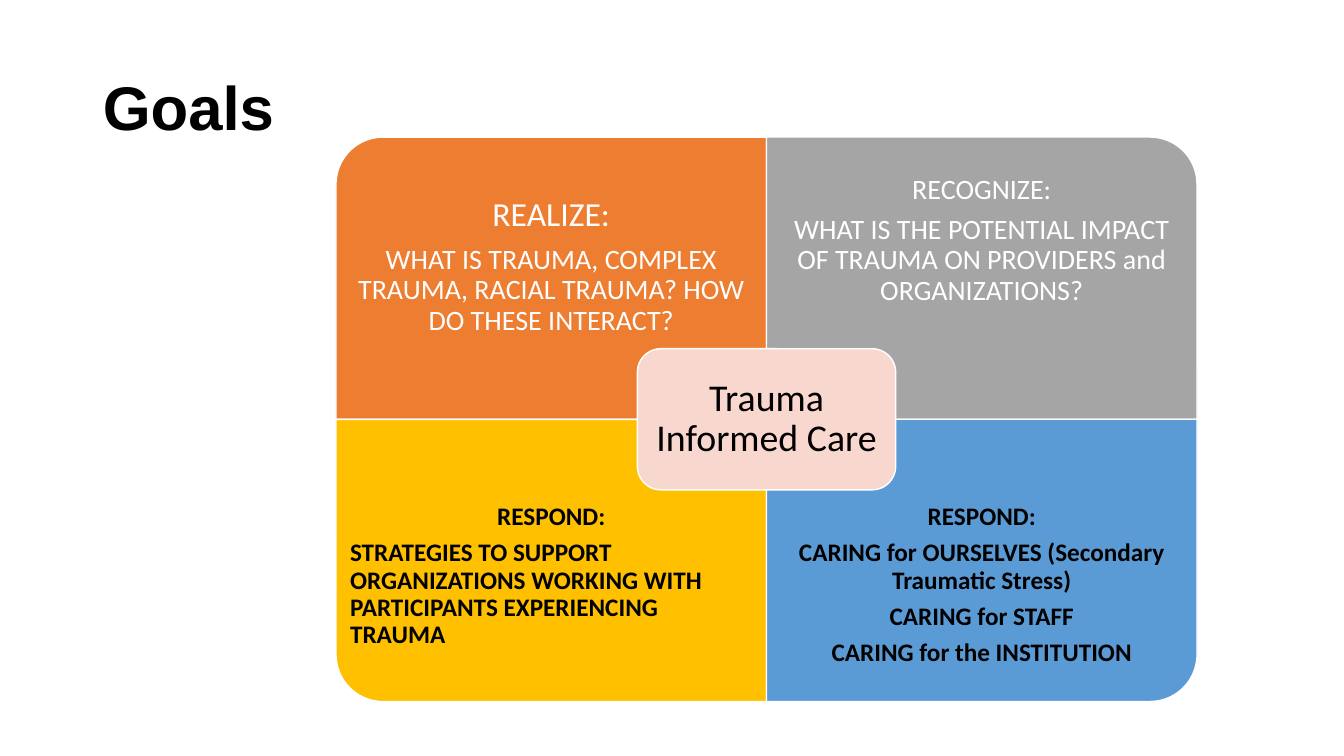
from pptx import Presentation
from pptx import util as u
from pptx.dml.color import RGBColor
from pptx.enum import shapes, text

WIDTH, HEIGHT = 13.33, 7.5
LEFT, CENTER = text.PP_ALIGN.LEFT, text.PP_ALIGN.CENTER

QUADRANTS = [
    dict(column=0, row=0, turn=270, fill="ED7D31", color="FFFFFF", bold=False, side=0.19, top=0.6,
         lines=[("REALIZE:", 24, CENTER),
                ("WHAT IS TRAUMA, COMPLEX TRAUMA, RACIAL TRAUMA? HOW DO THESE INTERACT?", 20, CENTER)]),
    dict(column=1, row=0, turn=0, fill="A5A5A5", color="FFFFFF", bold=False, side=0.12, top=0.38,
         lines=[("RECOGNIZE:", 20, CENTER),
                ("WHAT IS THE POTENTIAL IMPACT OF TRAUMA ON PROVIDERS and ORGANIZATIONS?", 20, CENTER)]),
    dict(column=0, row=1, turn=180, fill="FFC000", color="000000", bold=True, side=0.14, top=0.14,
         lines=[("RESPOND:", 18, CENTER),
                ("STRATEGIES TO SUPPORT ORGANIZATIONS WORKING WITH PARTICIPANTS EXPERIENCING TRAUMA", 18, LEFT)]),
    dict(column=1, row=1, turn=90, fill="5B9BD5", color="000000", bold=True, side=0.14, top=0.14,
         lines=[("RESPOND:", 18, CENTER),
                ("CARING for OURSELVES (Secondary Traumatic Stress)", 18, CENTER),
                ("CARING for STAFF", 18, CENTER),
                ("CARING for the INSTITUTION", 18, CENTER)]),
]


def rgb(value):
    return RGBColor.from_string(value)


def inches(*lengths):
    return [u.Inches(length) for length in lengths]


def write(frame, lines, color, bold, side, top, anchor, font="Calibri"):
    frame.word_wrap = True
    frame.auto_size = text.MSO_AUTO_SIZE.NONE
    frame.vertical_anchor = anchor
    frame.margin_left = frame.margin_right = frame.margin_bottom = u.Inches(side)
    frame.margin_top = u.Inches(top)
    for index, (words, size, align) in enumerate(lines):
        paragraph = frame.add_paragraph() if index else frame.paragraphs[0]
        paragraph.text = words
        paragraph.alignment = align
        paragraph.line_spacing = 0.9
        paragraph.space_before = u.Pt(0)
        paragraph.space_after = u.Pt(0.35 * size if index < len(lines) - 1 else 0)
        paragraph.font.name = font
        paragraph.font.size = u.Pt(size)
        paragraph.font.bold = bold
        paragraph.font.color.rgb = rgb(color)


def panel(slide, preset, box, fill):
    shape = slide.shapes.add_shape(preset, *inches(*box))
    shape.shadow.inherit = False
    shape.fill.solid()
    shape.fill.fore_color.rgb = rgb(fill)
    shape.line.color.rgb = rgb("FFFFFF")
    shape.line.width = u.Pt(1)
    return shape


def add_heading(slide, left, top, width, height):
    heading = slide.shapes.title
    heading.left, heading.top, heading.width, heading.height = inches(left, top, width, height)
    write(heading.text_frame, [("Goals", 44, LEFT)], "000000", True, 0.1, 0.05,
          text.MSO_ANCHOR.MIDDLE, "Arial")


def add_quadrant(slide, left, top, width, height, quadrant):
    turn = quadrant["turn"]
    across, down = (height, width) if turn % 180 else (width, height)
    box = left + (width - across) / 2, top + (height - down) / 2, across, down
    panel(slide, shapes.MSO_SHAPE.ROUND_1_RECTANGLE, box, quadrant["fill"]).rotation = turn
    text_top = top + quadrant["row"] * height / 4
    goal = slide.shapes.add_textbox(*inches(left, text_top, width, height * 3 / 4))
    write(goal.text_frame, quadrant["lines"], quadrant["color"], quadrant["bold"],
          quadrant["side"], quadrant["top"], text.MSO_ANCHOR.TOP)


def add_matrix(slide, left, top, width, height):
    column_width, row_height = width / 2, height / 2
    for quadrant in QUADRANTS:
        add_quadrant(slide, left + quadrant["column"] * column_width,
                     top + quadrant["row"] * row_height, column_width, row_height, quadrant)
    core_width, core_height = column_width * 0.6, row_height / 2
    core_box = left + (width - core_width) / 2, top + (height - core_height) / 2, core_width, core_height
    core = panel(slide, shapes.MSO_SHAPE.ROUNDED_RECTANGLE, core_box, "F8D7CE")
    write(core.text_frame, [("Trauma Informed Care", 27, CENTER)], "000000", False, 0.11, 0.11,
          text.MSO_ANCHOR.MIDDLE)


def main():
    deck = Presentation()
    deck.slide_width, deck.slide_height = inches(WIDTH, HEIGHT)
    slide = deck.slides.add_slide(deck.slide_layouts[5])
    add_heading(slide, 0.92, 0.4, 11.5, 1.45)
    add_matrix(slide, WIDTH * 0.25, 1.36, 8.54, 5.6)
    deck.save("out.pptx")


if __name__ == "__main__":
    main()
